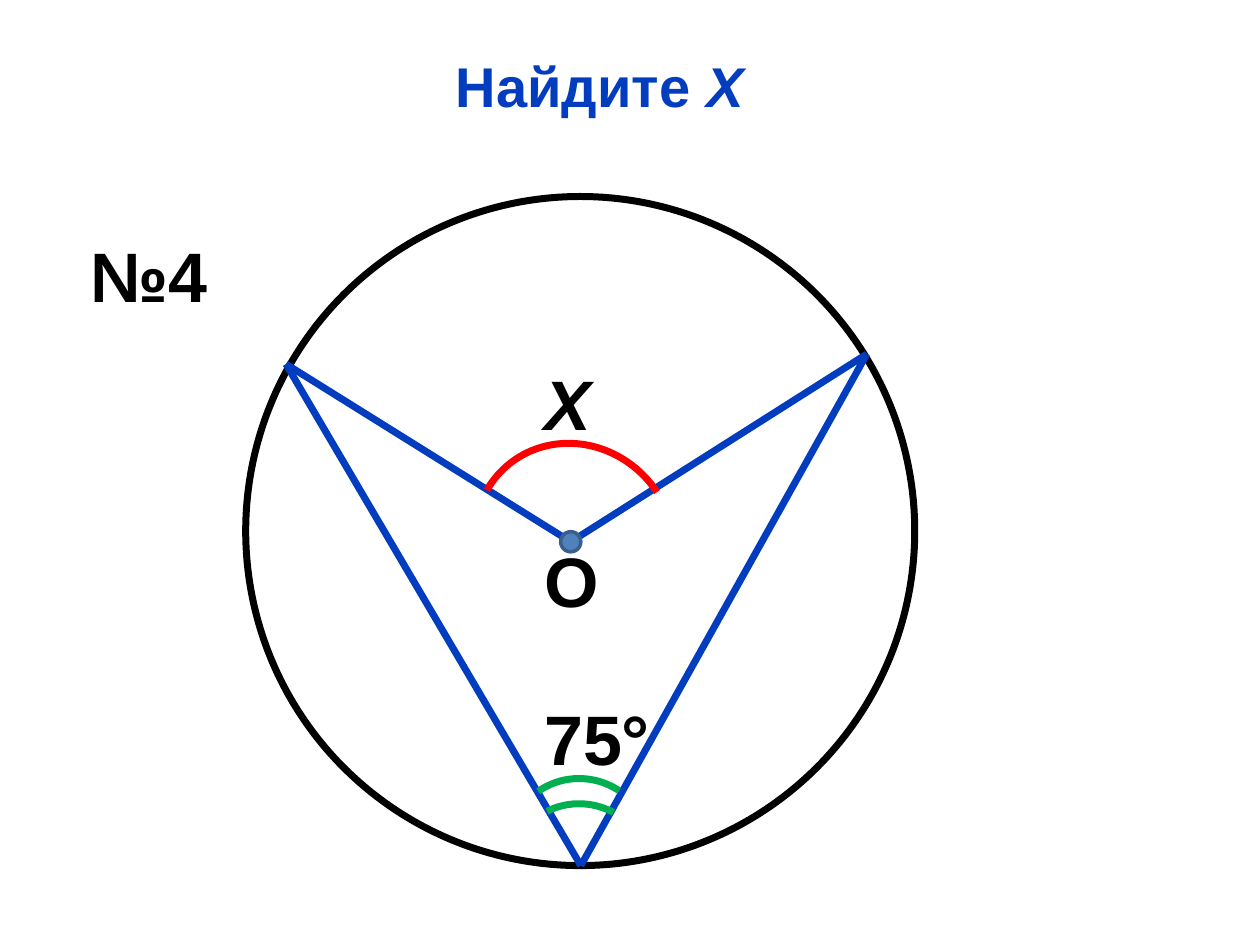
import pptx
import pptx.util
import pptx.dml.color
import pptx.enum.shapes
import pptx.enum.text
import pptx.oxml.ns
import lxml.etree

Inches, Pt = pptx.util.Inches, pptx.util.Pt
RGBColor = pptx.dml.color.RGBColor
SHAPE = pptx.enum.shapes.MSO_SHAPE
ALIGN = pptx.enum.text.PP_ALIGN

BLACK = RGBColor(0x00, 0x00, 0x00)
WHITE = RGBColor(0xFF, 0xFF, 0xFF)
BLUE = RGBColor(0x03, 0x3D, 0xBF)
RED = RGBColor(0xFF, 0x00, 0x00)
GREEN = RGBColor(0x00, 0xB0, 0x50)
DOT_FILL = RGBColor(0x4F, 0x81, 0xBD)
DOT_LINE = RGBColor(0x3A, 0x5F, 0x8C)


class Board:
    font = {"name": "Arial", "bold": True}
    stroke = 4

    def __init__(self, s):
        self.s = s

    def text(self, box, runs, size=40, color=BLACK, align=ALIGN.LEFT, wrap=True):
        """Add a text box; runs are (text, italic) pairs."""
        tf = self.s.shapes.add_textbox(*map(Inches, box)).text_frame
        tf.word_wrap = wrap
        tf.auto_size = pptx.enum.text.MSO_AUTO_SIZE.SHAPE_TO_FIT_TEXT
        p = tf.paragraphs[0]
        p.alignment = align
        for words, italic in runs:
            r = p.add_run()
            r.text = words
            r.font.color.rgb = color
            for key, value in {**self.font, "size": Pt(size), "italic": italic}.items():
                setattr(r.font, key, value)

    def shape(self, kind, box, line, fill=None, width=stroke):
        sp = self.s.shapes.add_shape(kind, *map(Inches, box))
        sp.shadow.inherit = False
        if fill is None:
            sp.fill.background()
        else:
            sp.fill.solid()
            sp.fill.fore_color.rgb = fill
        sp.line.color.rgb = line
        sp.line.width = Pt(width)
        return sp

    def arc(self, box, color, rotation, start, end):
        """Add an arc; start and end are degrees as seen on the slide."""
        sp = self.shape(SHAPE.ARC, box, color)
        sp.rotation = rotation
        for i, angle in enumerate((start, end)):
            # Angles are stored in 1/60000 degree, adjustments in 1/100000
            sp.adjustments[i] = (angle - rotation) % 360 * 0.6

    def segment(self, start, end, color):
        line = self.s.shapes.add_connector(
            pptx.enum.shapes.MSO_CONNECTOR.STRAIGHT, *map(Inches, start + end))
        line.line.color.rgb = color
        line.line.width = Pt(self.stroke)
        lxml.etree.SubElement(line._element.spPr, pptx.oxml.ns.qn("a:effectLst"))


def main():
    prs = pptx.Presentation()
    prs.slide_width, prs.slide_height = Inches(10), Inches(7.5)
    board = Board(prs.slides.add_slide(prs.slide_layouts[6]))

    # Title
    board.text((0.27, 0.36, 8.98, 0.63), [("Найдите ", False), ("Х", True)],
               size=32, color=BLUE, align=ALIGN.CENTER)

    # Circle with the central and inscribed angles
    board.shape(SHAPE.OVAL, (1.95, 1.56, 5.31, 5.31), BLACK, WHITE)
    center, left, right, bottom = (4.53, 4.3), (2.27, 2.89), (6.88, 2.81), (4.61, 6.87)
    for start, end in ((center, left), (right, center), (bottom, left), (bottom, right)):
        board.segment(start, end, BLUE)

    # Angle marks
    board.arc((3.73, 3.55, 1.66, 1.56), RED, 232.9, 212.36, 326.99)
    for top, start, end in ((6.18, 231.26, 306.28), (6.38, 239.96, 300.62)):
        board.arc((4.06, top, 1.09, 1.03), GREEN, 9.5, start, end)

    # Labels
    board.text((4.22, 2.81, 1.41, 0.77), [("Х", True)])
    board.text((4.22, 5.47, 1.05, 0.77), [("75°", False)], wrap=False)
    board.text((0.62, 1.8, 1.56, 0.77), [("№4", False)])
    board.text((4.22, 4.22, 0.64, 0.77), [("О", False)], wrap=False)

    # Center point
    board.shape(SHAPE.OVAL, (4.45, 4.22, 0.16, 0.16), DOT_LINE, DOT_FILL, width=2)

    prs.save("out.pptx")


if __name__ == "__main__":
    main()
